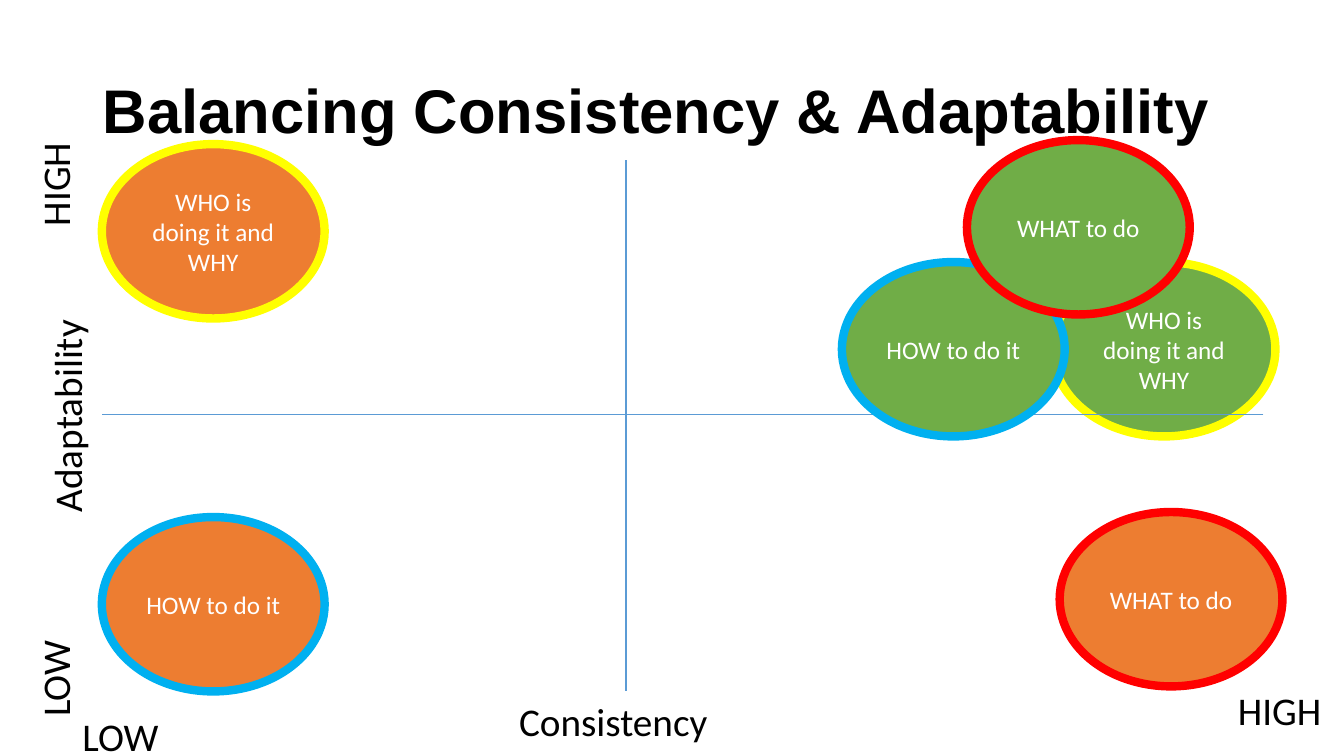
from pptx import Presentation
from pptx.dml.color import RGBColor
from pptx.enum.shapes import MSO_CONNECTOR, MSO_SHAPE
from pptx.enum.text import MSO_ANCHOR, PP_ALIGN
from pptx.util import Inches, Pt
from lxml import etree

STRAIGHT = MSO_CONNECTOR.STRAIGHT
OVAL = MSO_SHAPE.OVAL
MIDDLE, TOP = MSO_ANCHOR.MIDDLE, MSO_ANCHOR.TOP
CENTER, LEFT = PP_ALIGN.CENTER, PP_ALIGN.LEFT

COLORS = {
    "text": "000000",
    "bubble_text": "FFFFFF",
    "axis": "5B9BD5",
    "balanced": "70AD47",
    "one_sided": "ED7D31",
    "who": "FFFF00",
    "how": "00B0F0",
    "what": "FF0000",
}
FORMATS = {
    "title": {"name": "Arial", "size": Pt(44), "bold": True},
    "label": {"name": "Calibri", "size": Pt(28)},
    "bubble": {"name": "Calibri", "size": Pt(18)},
}
TOPICS = {
    "who": "WHO is doing it and WHY",
    "how": "HOW to do it",
    "what": "WHAT to do",
}
BUBBLE_SIZE = (2.21, 1.73)
LABEL_SIZE = (3.8, 0.58)
DRAWING_NS = "http://schemas.openxmlformats.org/drawingml/2006/main"


def rgb(name):
    return RGBColor.from_string(COLORS[name])


class QuadrantSlide:
    """Holds the current slide and draws its elements in the shared style."""

    def __init__(self, slide):
        self.shapes = slide.shapes

    def set_text(self, frame, text, style, color, align, anchor, spacing):
        frame.word_wrap = True
        frame.vertical_anchor = anchor
        paragraph = frame.paragraphs[0]
        paragraph.text = text
        paragraph.alignment = align
        paragraph.line_spacing = spacing
        for attribute, value in FORMATS[style].items():
            setattr(paragraph.font, attribute, value)
        paragraph.font.color.rgb = rgb(color)

    def title(self, text):
        box = self.shapes.add_textbox(*map(Inches, (0.92, 0.4, 11.5, 1.45)))
        self.set_text(box.text_frame, text, "title", "text", LEFT, MIDDLE, 0.9)

    def label(self, text, left, top, rotation=0):
        box = self.shapes.add_textbox(*map(Inches, (left, top, *LABEL_SIZE)))
        box.rotation = rotation
        self.set_text(box.text_frame, text, "label", "text", LEFT, TOP, 0.9)

    def axis(self, *ends):
        line = self.shapes.add_connector(STRAIGHT, *map(Inches, ends))
        line.line.color.rgb = rgb("axis")
        line.line.width = Pt(1)
        etree.SubElement(line._element.spPr, f"{{{DRAWING_NS}}}effectLst")

    def bubble(self, topic, fill, left, top):
        oval = self.shapes.add_shape(OVAL, *map(Inches, (left, top, *BUBBLE_SIZE)))
        oval.shadow.inherit = False
        oval.fill.solid()
        oval.fill.fore_color.rgb = rgb(fill)
        oval.line.color.rgb = rgb(topic)
        oval.line.width = Pt(6)
        self.set_text(oval.text_frame, TOPICS[topic], "bubble", "bubble_text",
                      CENTER, MIDDLE, 1.0)


def main():
    deck = Presentation()
    deck.slide_width, deck.slide_height = Inches(13.33), Inches(7.5)
    quadrant = QuadrantSlide(deck.slides.add_slide(deck.slide_layouts[6]))

    quadrant.title("Balancing Consistency & Adaptability")
    quadrant.bubble("who", "balanced", 10.44, 2.6)
    quadrant.axis(6.21, 1.59, 6.21, 6.86)
    quadrant.axis(12.53, 4.11, 1.01, 4.11)

    for text, left, top in (
        ("Consistency", 5.05, 6.92),
        ("LOW", 0.72, 7.07),
        ("HIGH", 12.18, 6.81),
    ):
        quadrant.label(text, left, top)
    for text, left, top in (
        ("Adaptability", -1.18, 2.99),
        ("LOW", -1.3, 5.02),
        ("HIGH", -1.3, 0.15),
    ):
        quadrant.label(text, left, top, rotation=270)

    for topic, fill, left, top in (
        ("how", "one_sided", 1.01, 5.13),
        ("who", "one_sided", 1.01, 1.43),
        ("what", "one_sided", 10.51, 5.08),
        ("how", "balanced", 8.35, 2.6),
        ("what", "balanced", 9.59, 1.39),
    ):
        quadrant.bubble(topic, fill, left, top)

    deck.save("out.pptx")


if __name__ == "__main__":
    main()
